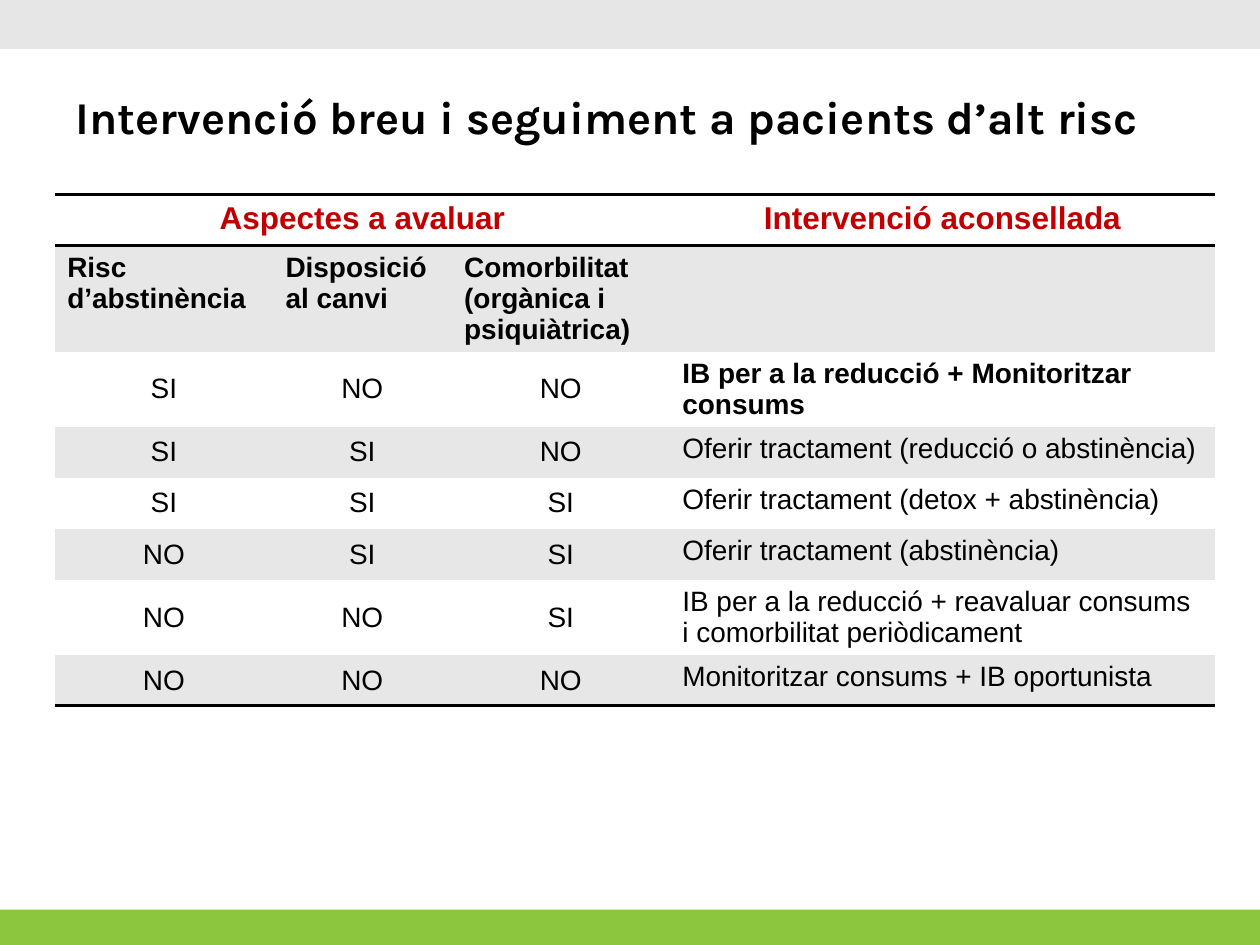
"""Build the slide on brief intervention and follow-up of high-risk patients."""
from dataclasses import dataclass

from lxml import etree
from pptx import Presentation
from pptx.dml.color import RGBColor
from pptx.enum.shapes import MSO_SHAPE as Preset
from pptx.enum.text import MSO_ANCHOR as Anchor, PP_ALIGN as Align
from pptx.oxml.ns import qn
from pptx.util import Pt


@dataclass(frozen=True)
class Theme:
    ink: str = "000000"
    accent: str = "C00000"
    paper: str = "FFFFFF"
    stripe: str = "E7E7E7"
    top: str = "E6E6E6"
    bottom: str = "8CC63E"
    title_size: int = 26
    heading_size: int = 18
    body_size: int = 16
    title_font: str = "Karla"
    body_font: str = "Arial"


theme = Theme()
NO_STYLE = "{2D5ABB26-0587-4C30-8999-92F81FD0307C}"


def write(frame, text, size=theme.body_size, color=theme.ink, font=theme.body_font,
          bold=False, align=Align.LEFT, anchor=Anchor.TOP):
    frame.word_wrap = True
    frame.vertical_anchor = anchor
    paragraph = frame.paragraphs[0]
    paragraph.alignment = align
    run = paragraph.add_run()
    run.text = text
    run.font.size = Pt(size)
    run.font.name = font
    run.font.bold = bold
    run.font.color.rgb = RGBColor.from_string(color)


def rule(cell, *sides):
    properties = cell._tc.get_or_add_tcPr()
    for position, side in enumerate(sides):
        line = etree.Element(qn(f"a:ln{side}"), w=str(Pt(2)))
        fill = etree.SubElement(line, qn("a:solidFill"))
        etree.SubElement(fill, qn("a:srgbClr"), val=theme.ink)
        properties.insert(position, line)


deck = Presentation()
deck.slide_width, deck.slide_height = Pt(720), Pt(540)
slide = deck.slides.add_slide(deck.slide_layouts[6])

for top, height, color in [(519.8, 22.4, theme.bottom), (-2.2, 30.2, theme.top)]:
    band = slide.shapes.add_shape(Preset.RECTANGLE, 0, Pt(top), Pt(720), Pt(height))
    band.shadow.inherit = False
    band.fill.solid()
    band.fill.fore_color.rgb = RGBColor.from_string(color)
    band.line.fill.background()

headings = ["Aspectes a avaluar", "", "", "Intervenció aconsellada"]
aspects = ["Risc d’abstinència", "Disposició al canvi",
           "Comorbilitat (orgànica i psiquiàtrica)", ""]
cases = [
    ["SI", "NO", "NO", "IB per a la reducció + Monitoritzar consums"],
    ["SI", "SI", "NO", "Oferir tractament (reducció o abstinència)"],
    ["SI", "SI", "SI", "Oferir tractament (detox + abstinència)"],
    ["NO", "SI", "SI", "Oferir tractament (abstinència)"],
    ["NO", "NO", "SI", "IB per a la reducció + reavaluar consums i comorbilitat periòdicament"],
    ["NO", "NO", "NO", "Monitoritzar consums + IB oportunista"],
]
rows = [headings, aspects, *cases]
widths = [124.7, 102.1, 124.7, 311.6]

holder = slide.shapes.add_table(len(rows), len(widths), Pt(31.3), Pt(111.3),
                                Pt(sum(widths)), Pt(29.2 * len(rows)))
guide = holder.table
guide.first_row = guide.horz_banding = False
guide._tbl.tblPr.find(qn("a:tableStyleId")).text = NO_STYLE
for column, width in zip(guide.columns, widths):
    column.width = Pt(width)

heading_format = dict(size=theme.heading_size, color=theme.accent, bold=True, align=Align.CENTER)
answer_format = dict(align=Align.CENTER, anchor=Anchor.MIDDLE)
for r, row in enumerate(rows):
    guide.rows[r].height = Pt(29.2)
    for c, text in enumerate(row):
        cell = guide.cell(r, c)
        cell.fill.solid()
        cell.fill.fore_color.rgb = RGBColor.from_string(theme.stripe if r % 2 else theme.paper)
        if r == 0:
            rule(cell, "T", "B")
        elif r == len(rows) - 1:
            rule(cell, "B")
        if not text:
            continue
        if r == 0:
            style = heading_format
        elif r == 1:
            style = dict(bold=True)
        elif c < 3:
            style = answer_format
        else:
            style = dict(bold=r == 2)
        cell.vertical_anchor = style.get("anchor", Anchor.TOP)
        write(cell.text_frame, text, **style)
guide.cell(0, 0).merge(guide.cell(0, 2))

title = slide.shapes.add_textbox(Pt(36), Pt(21.6), Pt(648), Pt(90))
write(title.text_frame, "Intervenció breu i seguiment a pacients d’alt risc",
      size=theme.title_size, font=theme.title_font, bold=True, anchor=Anchor.MIDDLE)

deck.save("out.pptx")
